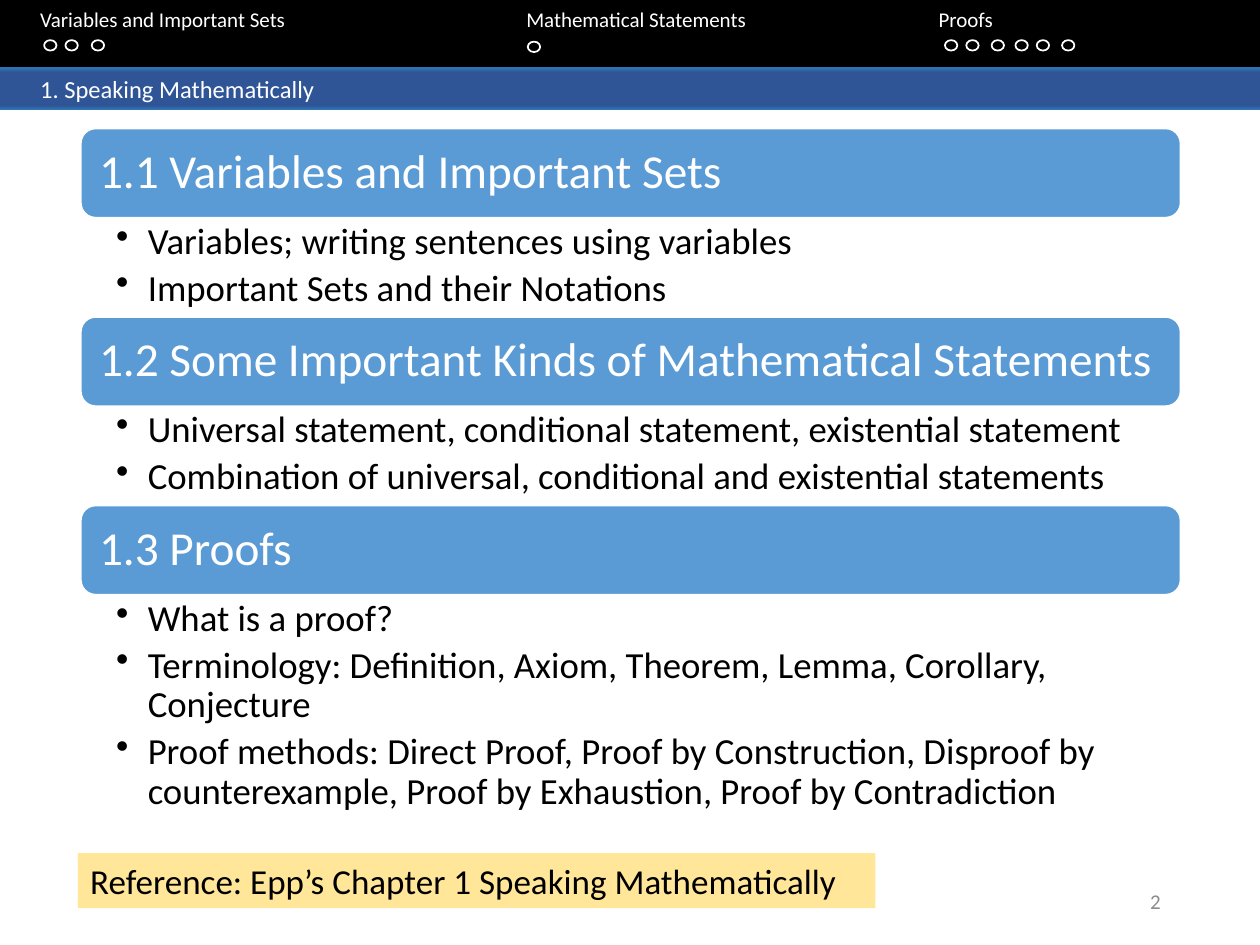
import copy
from dataclasses import dataclass

import pptx
import pptx.dml.color
import pptx.enum.shapes
import pptx.enum.text
import pptx.oxml.ns
import pptx.util
from lxml import etree

Cm = pptx.util.Cm
Pt = pptx.util.Pt
RGB = pptx.dml.color.RGBColor.from_string
qn = pptx.oxml.ns.qn
Kind = pptx.enum.shapes.MSO_SHAPE
Align = pptx.enum.text.PP_ALIGN
Anchor = pptx.enum.text.MSO_ANCHOR


@dataclass
class Theme:
    font: str = "Calibri"
    black: str = "000000"
    white: str = "FFFFFF"
    gray: str = "8C8C8C"
    edge: str = "2E75B6"
    band: str = "2F5597"
    bar: str = "5B9BD5"
    note: str = "FFE699"
    small: int = 12
    label: int = 14
    ref: int = 20
    body: int = 21
    head: int = 27


look = Theme()
deck = pptx.Presentation()
deck.slide_width, deck.slide_height = Cm(25.4), Cm(19.05)
slide = deck.slides.add_slide(deck.slide_layouts[6])
shapes = slide.shapes


def write(shape, *lines, size, color=look.white, align=Align.LEFT,
          anchor=Anchor.TOP, pad=(0.25, 0.13, 0.25, 0.13), space=1,
          after=0, tabs=(), bullet=False):
    frame = shape.text_frame
    frame.word_wrap = True
    frame.vertical_anchor = anchor
    (frame.margin_left, frame.margin_top,
     frame.margin_right, frame.margin_bottom) = map(Cm, pad)
    for i, line in enumerate(lines):
        para = frame.add_paragraph() if i else frame.paragraphs[0]
        para.alignment = align
        para.line_spacing = space
        para.space_after = Pt(after)
        run = para.add_run()
        run.text = line
        run.font.name = look.font
        run.font.size = Pt(size)
        run.font.color.rgb = RGB(color)
        props = para._p.get_or_add_pPr()
        if bullet:
            props.set("marL", str(Cm(0.64)))
            props.set("indent", str(-Cm(0.64)))
            etree.SubElement(props, qn("a:buChar"), char="•")
        if tabs:
            stops = etree.SubElement(props, qn("a:tabLst"))
            for tab in tabs:
                etree.SubElement(stops, qn("a:tab"), pos=str(Cm(tab)), algn="l")


def draw(kind, left, top, width, height, fill=None, line=None):
    shape = shapes.add_shape(kind, Cm(left), Cm(top), Cm(width), Cm(height))
    shape.shadow.inherit = False
    for part, color in ((shape.fill, fill), (shape.line.fill, line)):
        if color:
            part.solid()
            part.fore_color.rgb = RGB(color)
        else:
            part.background()
    if line:
        shape.line.width = Pt(1)
    return shape


draw(Kind.RECTANGLE, 0, -0.05, 25.4, 1.42, look.black)
menu = shapes.add_textbox(0, 0, Cm(25.4), Cm(1.27))
write(menu, "Variables and Important Sets\tMathematical Statements\tProofs",
      size=look.small, pad=(0.81, 0.13, 0.25, 0.13), tabs=(9.8, 18.11))

shades = ((0, look.edge), (0.11, look.band), (0.91, look.band), (1, look.edge))
for top, height in ((1.35, 0.76), (1.37, 0.84)):
    strip = draw(Kind.RECTANGLE, 0, top, 25.4, height)
    strip.fill.gradient()
    strip.fill.gradient_angle = 270
    stops = strip._element.spPr.find(".//" + qn("a:gsLst"))
    stops.extend(copy.deepcopy(list(stops)))
    for stop, (place, color) in zip(strip.fill.gradient_stops, shades):
        stop.position = place
        stop.color.rgb = RGB(color)
write(strip, "1. Speaking Mathematically", size=look.label,
      pad=(0.81, 0.13, 0.25, 0.13))

dots = (
    (0.81, (0.89, 1.32, 1.85)),
    (0.84, (10.64,)),
    (0.81, (19.05, 19.48, 19.99, 20.47, 20.9, 21.41)),
)
for top, row in dots:
    for left in row:
        draw(Kind.OVAL, left, top, 0.25, 0.21, line=look.white)

parts = (
    ("1.1 Variables and Important Sets", 2,
     ("Variables; writing sentences using variables",
      "Important Sets and their Notations")),
    ("1.2 Some Important Kinds of Mathematical Statements", 2,
     ("Universal statement, conditional statement, existential statement",
      "Combination of universal, conditional and existential statements")),
    ("1.3 Proofs", 4.65,
     ("What is a proof?",
      "Terminology: Definition, Axiom, Theorem, Lemma, Corollary, Conjecture",
      "Proof methods: Direct Proof, Proof by Construction, Disproof by "
      "counterexample, Proof by Exhaustion, Proof by Contradiction")),
)
left, top, width, tall = 1.63, 2.59, 22.17, 1.8
for title, height, points in parts:
    bar = draw(Kind.ROUNDED_RECTANGLE, left, top, width, tall, look.bar, look.white)
    write(bar, title, size=look.head, anchor=Anchor.MIDDLE,
          pad=(0.28, 0.28, 0.2, 0.28), space=0.9)
    top += tall
    box = shapes.add_textbox(Cm(left), Cm(top), Cm(width), Cm(height))
    write(box, *points, size=look.body, color=look.black,
          pad=(0.71, 0.1, 0.53, 0.1), space=0.9, after=4, bullet=True)
    top += height

note = draw(Kind.RECTANGLE, 1.57, 17.2, 16.08, 1.11, look.note)
write(note, "Reference: Epp’s Chapter 1 Speaking Mathematically",
      size=look.ref, color=look.black)
page = shapes.add_textbox(Cm(17.93), Cm(17.65), Cm(5.72), Cm(1.02))
write(page, "2", size=look.small, color=look.gray, align=Align.RIGHT,
      anchor=Anchor.MIDDLE)

deck.save("out.pptx")
